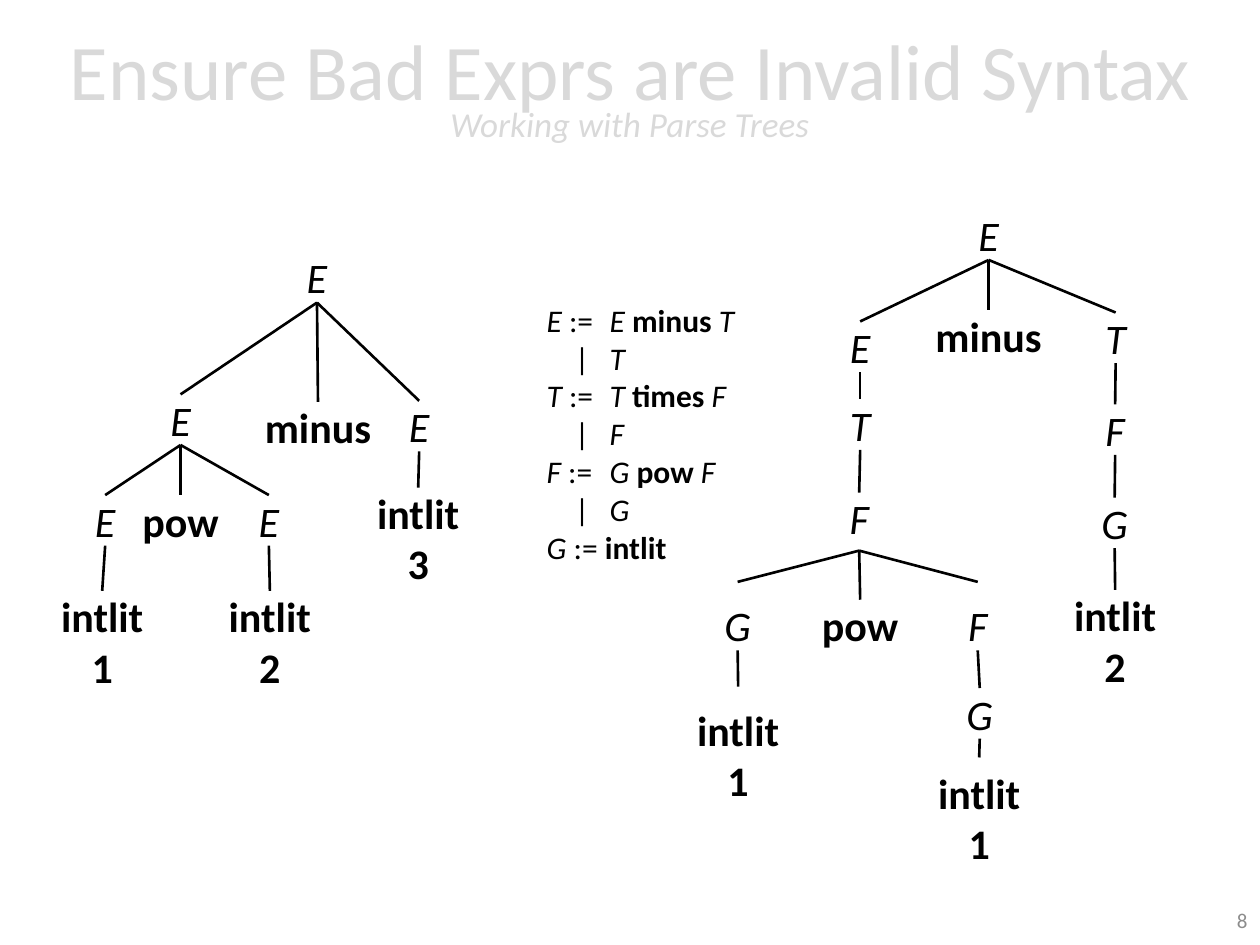
from dataclasses import dataclass

from lxml import etree
from pptx import Presentation
from pptx.dml.color import RGBColor
from pptx.enum.shapes import MSO_CONNECTOR
from pptx.enum.text import MSO_ANCHOR, MSO_AUTO_SIZE, PP_ALIGN
from pptx.oxml.ns import qn
from pptx.util import Cm, Pt

STRAIGHT = MSO_CONNECTOR.STRAIGHT
MIDDLE = MSO_ANCHOR.MIDDLE
NO_FIT = MSO_AUTO_SIZE.NONE
LEFT, CENTER, RIGHT = PP_ALIGN.LEFT, PP_ALIGN.CENTER, PP_ALIGN.RIGHT

FONT = "Calibri"
BLACK, PALE, GRAY = "000000", "D9D9D9", "8C8C8C"
LINE_HEIGHT = 1.02
LABEL_WIDTHS = {"E": 0.94, "T": 0.94, "F": 0.91, "G": 1.04,
                "pow": 2.06, "minus": 2.67, "intlit": 2.18}
TOP_SIDE, BOTTOM_SIDE = 0, 2
GRAMMAR_TABS = (0.57, 1.27)


@dataclass(frozen=True)
class Span:
    text: str
    italic: bool = False
    bold: bool = False


@dataclass(frozen=True)
class Node:
    """Parse tree node; drop and lift shorten the edges below and above it (cm)."""
    label: str
    center: float
    top: float
    children: tuple["Node", ...] = ()
    value: str = ""
    drop: float = 0
    lift: float = 0

    @property
    def height(self) -> float:
        return LINE_HEIGHT * (2 if self.value else 1)


LEFT_TREE = Node("E", 6.39, 5.08, (
    Node("E", 3.64, 7.95, (
        Node("E", 2.12, 9.98, (Node("intlit", 2.06, 11.91, value="1"),)),
        Node("pow", 3.64, 9.98),
        Node("E", 5.42, 9.98, (Node("intlit", 5.44, 11.91, value="2"),)),
    )),
    Node("minus", 6.41, 8.1),
    Node("E", 8.45, 8.08, (Node("intlit", 8.43, 9.83, value="3"),)),
))

POWER = Node("F", 17.32, 9.93, (
    Node("G", 14.87, 12.09, (
        Node("intlit", 14.88, 14.2, value="1", lift=0.36),), lift=0.36),
    Node("pow", 17.34, 12.09),
    Node("F", 19.71, 12.09, (
        Node("G", 19.75, 13.87, (
            Node("intlit", 19.74, 15.47, value="1", lift=0.2),)),), lift=0.36),
), drop=0.15)

RIGHT_TREE = Node("E", 19.93, 4.22, (
    Node("E", 17.34, 6.48, (Node("T", 17.34, 8.05, (POWER,)),)),
    Node("minus", 19.93, 6.25),
    Node("T", 22.49, 6.3, (
        Node("F", 22.48, 8.15, (
            Node("G", 22.47, 10.03, (
                Node("intlit", 22.48, 11.89, value="2"),)),)),)),
))


def binary_rule(head: str, left: str, operator: str, right: str) -> list[Span]:
    return [Span(head, italic=True), Span(" :=\t"), Span(f"{left} ", italic=True),
            Span(f"{operator} ", bold=True), Span(right, italic=True)]


def alternative(symbol: str) -> list[Span]:
    return [Span("\t|\t"), Span(symbol, italic=True)]


GRAMMAR = [
    binary_rule("E", "E", "minus", "T"), alternative("T"),
    binary_rule("T", "T", "times", "F"), alternative("F"),
    binary_rule("F", "G", "pow", "F"), alternative("G"),
    [Span("G", italic=True), Span(" := "), Span("intlit", bold=True)],
]


def rgb(value: str) -> RGBColor:
    return RGBColor.from_string(value)


def add_span(para, span: Span, size: float, color: str = BLACK) -> None:
    run = para.add_run()
    run.text = span.text
    run.font.name = FONT
    run.font.size = Pt(size)
    run.font.italic = span.italic
    run.font.bold = span.bold
    run.font.color.rgb = rgb(color)


def add_box(page, left: float, top: float, width: float, height: float,
            lines: list[list[Span]], size: float, align=LEFT, color: str = BLACK):
    box = page.shapes.add_textbox(Cm(left), Cm(top), Cm(width), Cm(height))
    frame = box.text_frame
    frame.word_wrap = False
    for index, spans in enumerate(lines):
        para = frame.add_paragraph() if index else frame.paragraphs[0]
        para.alignment = align
        for span in spans:
            add_span(para, span, size, color)
    return box


def add_edge(page, parent: Node, parent_box, child: Node, child_box) -> None:
    edge = page.shapes.add_connector(
        STRAIGHT, Cm(parent.center), Cm(parent.top + parent.height + parent.drop),
        Cm(child.center), Cm(child.top - child.lift))
    if not parent.drop:
        edge.begin_connect(parent_box, BOTTOM_SIDE)
    if not child.lift:
        edge.end_connect(child_box, TOP_SIDE)
    edge.line.color.rgb = rgb(BLACK)
    edge.line.width = Pt(1.5)
    etree.SubElement(edge._element.spPr, qn("a:effectLst"))


def add_tree(page, node: Node):
    """Draw a node with everything below it and return the node's box."""
    terminal = node.label.islower()
    texts = [node.label, node.value] if node.value else [node.label]
    lines = [[Span(text, italic=not terminal, bold=terminal)] for text in texts]
    width = LABEL_WIDTHS[node.label]
    box = add_box(page, node.center - width / 2, node.top, width, node.height,
                  lines, 24, CENTER)
    box.text_frame.margin_top = box.text_frame.margin_bottom = 0
    for child in node.children:
        add_edge(page, node, box, child, add_tree(page, child))
    return box


def add_title(page) -> None:
    title = page.shapes.title
    title.left, title.top, title.width, title.height = Cm(0), Cm(0.08), Cm(25.4), Cm(3.68)
    frame = title.text_frame
    frame.auto_size = NO_FIT
    frame.vertical_anchor = MIDDLE
    para = frame.paragraphs[0]
    para.alignment = CENTER
    para.line_spacing = 0.7
    add_span(para, Span("Ensure Bad Exprs are Invalid Syntax"), 45, PALE)
    para.add_line_break()
    add_span(para, Span("Working with Parse Trees", italic=True), 20, PALE)


def add_grammar(page) -> None:
    box = add_box(page, 10.77, 5.94, 4.32, 5.64, GRAMMAR, 18)
    for para in box.text_frame.paragraphs:
        stops = etree.SubElement(para._p.get_or_add_pPr(), qn("a:tabLst"))
        for position in GRAMMAR_TABS:
            etree.SubElement(stops, qn("a:tab"), pos=str(Cm(position)), algn="l")


def main() -> None:
    deck = Presentation()
    deck.slide_width, deck.slide_height = Cm(25.4), Cm(19.05)
    page = deck.slides.add_slide(deck.slide_layouts[5])
    add_title(page)
    number = add_box(page, 19.69, 18.03, 5.71, 1.02, [[Span("8")]], 12, RIGHT, GRAY)
    number.text_frame.word_wrap = True
    number.text_frame.vertical_anchor = MIDDLE
    for tree in (LEFT_TREE, RIGHT_TREE):
        add_tree(page, tree)
    add_grammar(page)
    deck.save("out.pptx")


if __name__ == "__main__":
    main()
